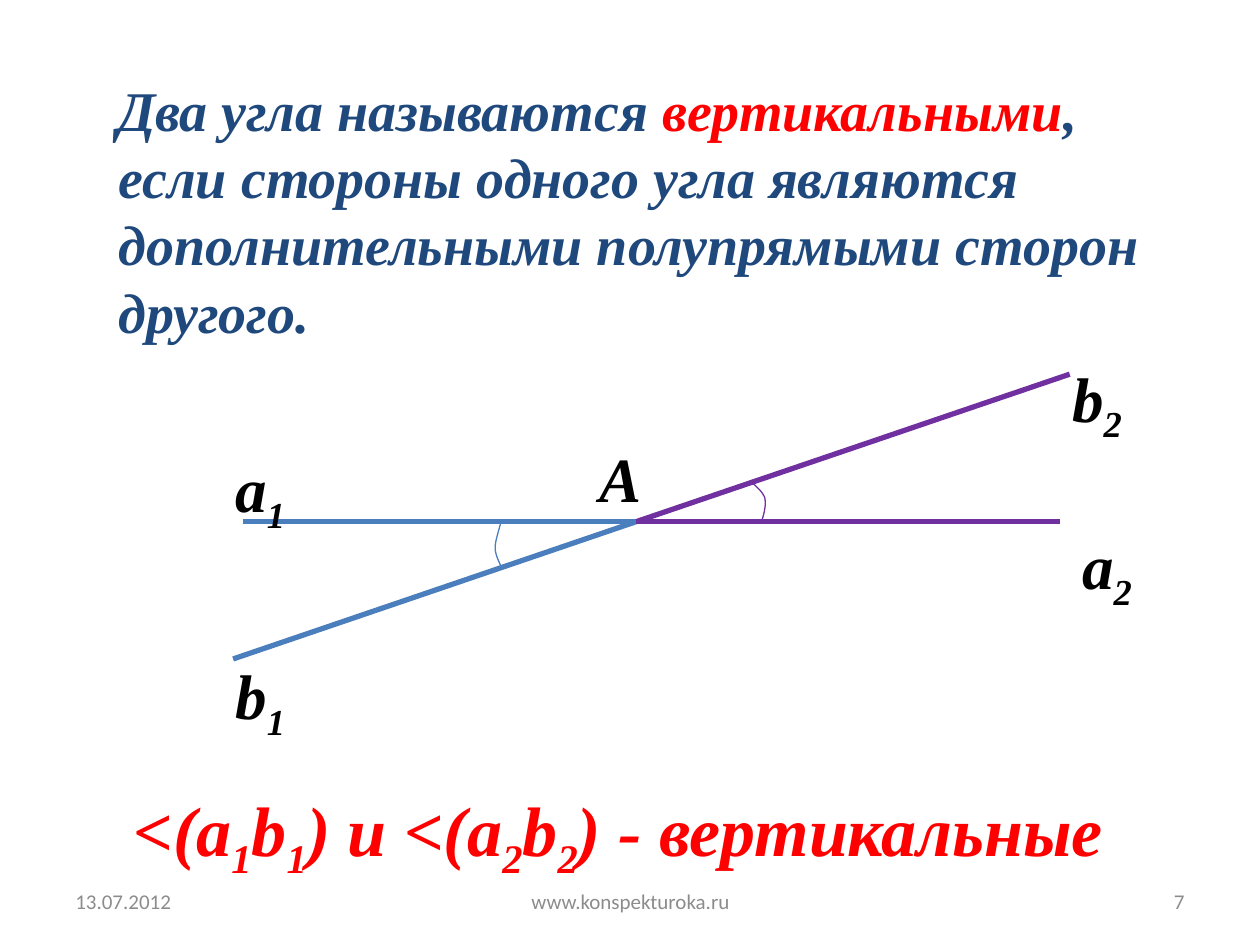
"""Build a geometry slide that defines vertical angles."""
from pptx import Presentation
from pptx.dml.color import RGBColor
from pptx.enum.text import MSO_ANCHOR, PP_ALIGN
from pptx.oxml.ns import qn
from pptx.util import Inches, Pt
from lxml import etree

LEFT, CENTER, RIGHT = PP_ALIGN.LEFT, PP_ALIGN.CENTER, PP_ALIGN.RIGHT
TOP, MIDDLE = MSO_ANCHOR.TOP, MSO_ANCHOR.MIDDLE
NAVY = RGBColor(0x1F, 0x49, 0x7D)
RED = RGBColor(0xFF, 0, 0)
BLACK = RGBColor(0, 0, 0)
GRAY = RGBColor(0x8C, 0x8C, 0x8C)
BLUE = RGBColor(0x4B, 0x7E, 0xBC)
PURPLE = RGBColor(0x70, 0x30, 0xA0)
SERIF, SANS = "Times New Roman", "Calibri"
WIDTH, HEIGHT = 10, 7.5
CURVE_STEPS = 12

DEFINITION = [
    ("Два угла называются ", NAVY),
    ("вертикальными", RED),
    (", если стороны одного угла являются дополнительными полупрямыми сторон другого.", NAVY),
]
CONCLUSION = ["<(а", "1", "b", "1", ") и <(a", "2", "b", "2", ") - вертикальные"]
VERTEX = (5.05, 4.14)
RAYS = [((1.93, 4.14), BLUE), ((1.85, 5.23), BLUE), ((8.41, 4.14), PURPLE), ((8.49, 2.97), PURPLE)]
LABELS = [
    (["а", "1"], 1.77, 3.52, 0.62),
    (["а", "2"], 8.49, 4.13, 0.62),
    (["b", "1"], 1.77, 5.16, 0.62),
    (["b", "2"], 8.41, 2.8, 0.62),
    (["A"], 4.66, 3.44, 0.54),
]
ARCS = [
    ([(3.98, 4.13), (3.96, 4.21), (3.93, 4.29), (3.93, 4.35),
      (3.93, 4.41), (3.98, 4.5), (3.98, 4.5)], BLUE),
    ([(5.97, 3.83), (6.01, 3.87), (6.05, 3.9), (6.07, 3.95),
      (6.08, 4), (6.07, 4.06), (6.05, 4.12)], PURPLE),
]
FOOTERS = [
    ("13.07.2012", 0.5, 2.33, LEFT),
    ("www.konspekturoka.ru", 3.42, 3.17, CENTER),
    ("7", 7.17, 2.33, RIGHT),
]


def add_text(slide, box, pieces, size, font=SERIF, strong=True, wrap=True, align=LEFT, anchor=TOP):
    """Add a text box of (text, colour, is_subscript) pieces and return its paragraph."""
    frame = slide.shapes.add_textbox(*map(Inches, box)).text_frame
    frame.word_wrap = wrap
    frame.vertical_anchor = anchor
    paragraph = frame.paragraphs[0]
    paragraph.alignment = align
    for text, color, is_subscript in pieces:
        run = paragraph.add_run()
        run.text = text
        run.font.name, run.font.size = font, Pt(size)
        run.font.bold = run.font.italic = strong
        run.font.color.rgb = color
        if is_subscript:
            run._r.get_or_add_rPr().set("baseline", "-25000")
    return paragraph


def with_subscripts(texts, color):
    """Mark every piece made of digits as a subscript."""
    return [(text, color, text.isdigit()) for text in texts]


def add_ray(slide, end, color):
    """Draw a thick ray from the common vertex."""
    ray = slide.shapes.add_connector(1, *map(Inches, VERTEX + end))
    ray.line.color.rgb = color
    ray.line.width = Pt(3)
    etree.SubElement(ray._element.spPr, qn("a:effectLst"))


def curve_points(controls):
    """Sample a chain of cubic curves."""
    points = [controls[0]]
    for first in range(0, len(controls) - 1, 3):
        start, one, two, end = controls[first:first + 4]
        for step in range(1, CURVE_STEPS + 1):
            t = step / CURVE_STEPS
            weights = ((1 - t) ** 3, 3 * t * (1 - t) ** 2, 3 * t * t * (1 - t), t ** 3)
            points.append(tuple(
                sum(weight * value for weight, value in zip(weights, values))
                for values in zip(start, one, two, end)))
    return points


def add_arc(slide, controls, color):
    """Draw a thin open angle mark."""
    points = [(Inches(x), Inches(y)) for x, y in curve_points(controls)]
    builder = slide.shapes.build_freeform(*points[0])
    builder.add_line_segments(points[1:], close=False)
    arc = builder.convert_to_shape()
    arc.shadow.inherit = False
    arc.fill.background()
    arc.line.color.rgb = color
    arc.line.width = Pt(0.75)


def main():
    presentation = Presentation()
    presentation.slide_width, presentation.slide_height = Inches(WIDTH), Inches(HEIGHT)
    slide = presentation.slides.add_slide(presentation.slide_layouts[6])
    definition = add_text(slide, (0.74, 0.55, 8.52, 2.24),
                          [(text, color, False) for text, color in DEFINITION], 32)
    properties = definition._p.get_or_add_pPr()
    properties.set("marL", str(Inches(0.1)))
    properties.set("indent", str(Inches(-0.01)))
    for end, color in RAYS:
        add_ray(slide, end, color)
    for texts, left, top, width in LABELS:
        add_text(slide, (left, top, width, 0.71), with_subscripts(texts, BLACK), 36, wrap=False)
    add_text(slide, (0.96, 6.19, 8.08, 0.77), with_subscripts(CONCLUSION, RED), 40, wrap=False)
    for controls, color in ARCS:
        add_arc(slide, controls, color)
    for text, left, width, align in FOOTERS:
        add_text(slide, (left, 6.95, width, 0.4), [(text, GRAY, False)], 12, SANS,
                 strong=False, align=align, anchor=MIDDLE)
    presentation.save("out.pptx")


if __name__ == "__main__":
    main()
